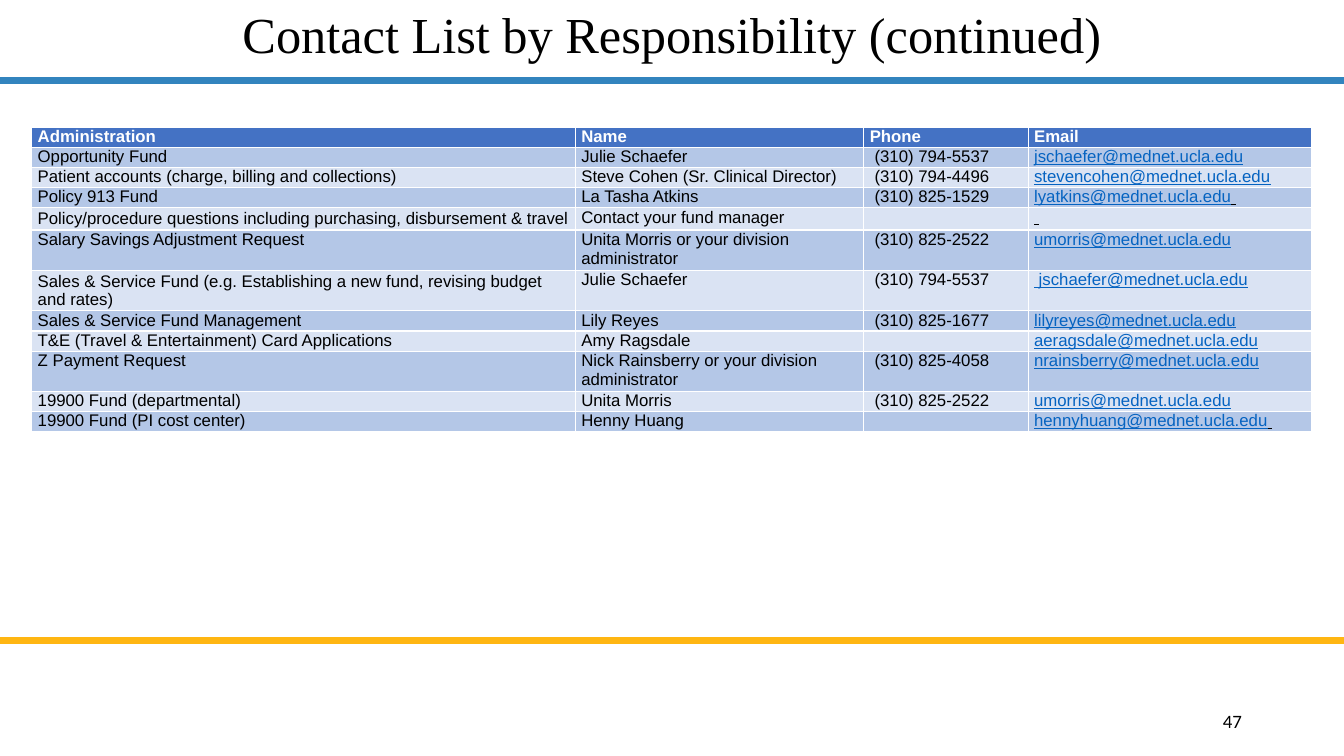
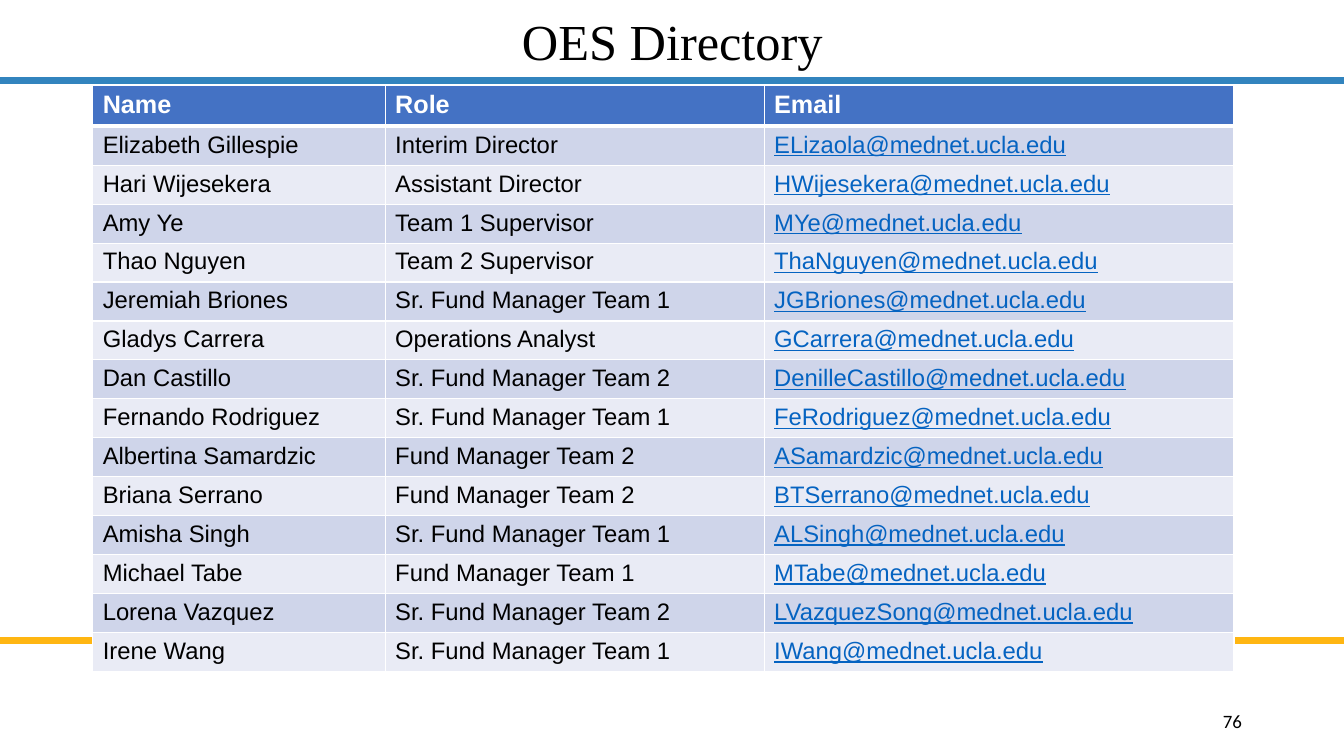
import dataclasses

import lxml.etree
import pptx
import pptx.dml.color
import pptx.enum.shapes
import pptx.enum.text
import pptx.oxml.ns
import pptx.util

Cm = pptx.util.Cm
Pt = pptx.util.Pt
qn = pptx.oxml.ns.qn
ALIGN = pptx.enum.text.PP_ALIGN
ANCHOR = pptx.enum.text.MSO_ANCHOR


@dataclasses.dataclass(frozen=True)
class Theme:
    ink: str = "000000"
    paper: str = "FFFFFF"
    link: str = "0563C1"
    head: str = "4472C4"
    blue: str = "3284BE"
    gold: str = "FFB612"
    serif: str = "Times New Roman"
    sans: str = "Arial"
    digits: str = "Calibri"
    title: float = 36
    number: float = 13.5
    rule: float = 5


THEME = Theme()
WIDE, HIGH = 33.87, 19.05
RULES = [(2.03, THEME.blue), (16.15, THEME.gold)]

CONTACTS = [
    ("Administration", "Name", "Phone", "Email"),
    ("Opportunity Fund", "Julie Schaefer", "(310) 794-5537",
     "jschaefer@mednet.ucla.edu"),
    ("Patient accounts (charge, billing and collections)",
     "Steve Cohen (Sr. Clinical Director)", "(310) 794-4496",
     "stevencohen@mednet.ucla.edu"),
    ("Policy 913 Fund", "La Tasha Atkins", "(310) 825-1529",
     "lyatkins@mednet.ucla.edu "),
    ("Policy/procedure questions including purchasing, disbursement & travel",
     "Contact your fund manager", "", " "),
    ("Salary Savings Adjustment Request",
     "Unita Morris or your division administrator", "(310) 825-2522",
     "umorris@mednet.ucla.edu"),
    ("Sales & Service Fund (e.g. Establishing a new fund, revising budget and rates)",
     "Julie Schaefer", "(310) 794-5537", " jschaefer@mednet.ucla.edu"),
    ("Sales & Service Fund Management", "Lily Reyes", "(310) 825-1677",
     "lilyreyes@mednet.ucla.edu"),
    ("T&E (Travel & Entertainment) Card Applications", "Amy Ragsdale", "",
     "aeragsdale@mednet.ucla.edu"),
    ("Z Payment Request", "Nick Rainsberry or your division administrator",
     "(310) 825-4058", "nrainsberry@mednet.ucla.edu"),
    ("19900 Fund (departmental)", "Unita Morris", "(310) 825-2522",
     "umorris@mednet.ucla.edu"),
    ("19900 Fund (PI cost center)", "Henny Huang", "",
     "hennyhuang@mednet.ucla.edu "),
]

STAFF = [
    ("Name", "Role", "Email"),
    ("Elizabeth Gillespie", "Interim Director", "ELizaola@mednet.ucla.edu"),
    ("Hari Wijesekera", "Assistant Director", "HWijesekera@mednet.ucla.edu"),
    ("Amy Ye", "Team 1 Supervisor", "MYe@mednet.ucla.edu"),
    ("Thao Nguyen", "Team 2 Supervisor", "ThaNguyen@mednet.ucla.edu"),
    ("Jeremiah Briones", "Sr. Fund Manager Team 1", "JGBriones@mednet.ucla.edu"),
    ("Gladys Carrera", "Operations Analyst", "GCarrera@mednet.ucla.edu"),
    ("Dan Castillo", "Sr. Fund Manager Team 2", "DenilleCastillo@mednet.ucla.edu"),
    ("Fernando Rodriguez", "Sr. Fund Manager Team 1", "FeRodriguez@mednet.ucla.edu"),
    ("Albertina Samardzic", "Fund Manager Team 2", "ASamardzic@mednet.ucla.edu"),
    ("Briana Serrano", "Fund Manager Team 2", "BTSerrano@mednet.ucla.edu"),
    ("Amisha Singh", "Sr. Fund Manager Team 1", "ALSingh@mednet.ucla.edu"),
    ("Michael Tabe", "Fund Manager Team 1", "MTabe@mednet.ucla.edu"),
    ("Lorena Vazquez", "Sr. Fund Manager Team 2", "LVazquezSong@mednet.ucla.edu"),
    ("Irene Wang", "Sr. Fund Manager Team 1", "IWang@mednet.ucla.edu"),
]

# Lengths are in centimetres; "pads" are left, top, right, bottom.
SLIDES = [
    dict(title="Contact List by Responsibility (continued)",
         box=(3.4, -0.89, 27.08, 3.68), number="47", rows=CONTACTS,
         at=(0.8, 3.2), cols=(13.7, 7.27, 4.14, 7.14), row=0.33,
         tall={4: 0.56, 6: 0.56}, pads=(0.15, 0, 0, 0), inset={2: 0.27},
         sizes=(12, 12), bands=("B4C7E7", "DAE3F3"), under=1),
    dict(title="OES Directory",
         box=(2.34, 0, 29.21, 2.21), number="76", rows=STAFF,
         at=(2.34, 2.16), cols=(7.37, 9.55, 11.84), row=0.97,
         tall={}, pads=(0.25, 0.13, 0.25, 0.13), inset={},
         sizes=(18, 17), bands=("CFD5EA", "E9EBF5"), under=3),
]


def rgb(code):
    return pptx.dml.color.RGBColor.from_string(code)


def add_run(para, text, face, size, color, bold=False, under=False):
    run = para.add_run()
    run.text = text
    font = run.font
    font.name, font.size, font.bold = face, Pt(size), bold
    font.underline = under
    font.color.rgb = rgb(color)


def add_rule(slide, y, color):
    line = slide.shapes.add_connector(
        pptx.enum.shapes.MSO_CONNECTOR.STRAIGHT, 0, Cm(y), Cm(WIDE), Cm(y))
    line.line.color.rgb = rgb(color)
    line.line.width = Pt(THEME.rule)
    props = line._element.find(qn("p:spPr"))
    lxml.etree.SubElement(props, qn("a:effectLst"))


def add_label(slide, box, text, face, size, align):
    frame = slide.shapes.add_textbox(*map(Cm, box)).text_frame
    frame.word_wrap = True
    frame.vertical_anchor = ANCHOR.MIDDLE
    para = frame.paragraphs[0]
    para.alignment = align
    add_run(para, text, face, size, THEME.ink)
    return para


def edge(cell, top, base):
    """Draw the four cell borders; call before the fill is set."""
    props = cell._tc.get_or_add_tcPr()
    for side, width in (("L", 1), ("R", 1), ("T", top), ("B", base)):
        line = lxml.etree.SubElement(props, qn("a:ln" + side), w=str(Pt(width)))
        fill = lxml.etree.SubElement(line, qn("a:solidFill"))
        lxml.etree.SubElement(fill, qn("a:srgbClr"), val=THEME.paper)


def write(cell, text, size, head, mail):
    para = cell.text_frame.paragraphs[0]
    if head:
        add_run(para, text, THEME.sans, size, THEME.paper, bold=True)
    elif not text:
        lxml.etree.SubElement(para._p, qn("a:endParaRPr"), sz=str(size * 100))
    elif mail:
        link = text.rstrip()
        for part, color in ((link, THEME.link), (text[len(link):], THEME.ink)):
            if part:
                add_run(para, part, THEME.sans, size, color, under=True)
    else:
        add_run(para, text, THEME.sans, size, THEME.ink)


def add_grid(slide, page):
    rows, cols, tall = page["rows"], page["cols"], page["tall"]
    highs = [tall.get(r, page["row"]) for r in range(len(rows))]
    frame = slide.shapes.add_table(
        len(rows), len(cols), *map(Cm, page["at"]), Cm(sum(cols)), Cm(sum(highs)))
    grid = frame.table
    grid.first_row = grid.horz_banding = False
    for c, width in enumerate(cols):
        grid.columns[c].width = Cm(width)
    left, top, right, base = page["pads"]
    for r, row in enumerate(rows):
        grid.rows[r].height = Cm(highs[r])
        head = r == 0
        for c, text in enumerate(row):
            cell = grid.cell(r, c)
            pad = left if head else page["inset"].get(c, left)
            cell.margin_left, cell.margin_top = Cm(pad), Cm(top)
            cell.margin_right, cell.margin_bottom = Cm(right), Cm(base)
            middle = r in tall and c == 0
            cell.vertical_anchor = ANCHOR.MIDDLE if middle else ANCHOR.TOP
            edge(cell, page["under"] if r == 1 else 1, page["under"] if head else 1)
            cell.fill.solid()
            cell.fill.fore_color.rgb = rgb(
                THEME.head if head else page["bands"][(r - 1) % 2])
            write(cell, text, page["sizes"][0 if head else 1], head,
                  c == len(cols) - 1)


def main():
    deck = pptx.Presentation()
    deck.slide_width, deck.slide_height = Cm(WIDE), Cm(HIGH)
    for page in SLIDES:
        slide = deck.slides.add_slide(deck.slide_layouts[6])
        for y, color in RULES:
            add_rule(slide, y, color)
        title = add_label(slide, page["box"], page["title"],
                          THEME.serif, THEME.title, ALIGN.CENTER)
        title.line_spacing = 0.9
        add_label(slide, (23.93, 17.65, 7.62, 1.02), page["number"],
                  THEME.digits, THEME.number, ALIGN.RIGHT)
        add_grid(slide, page)
    deck.save("out.pptx")


if __name__ == "__main__":
    main()
